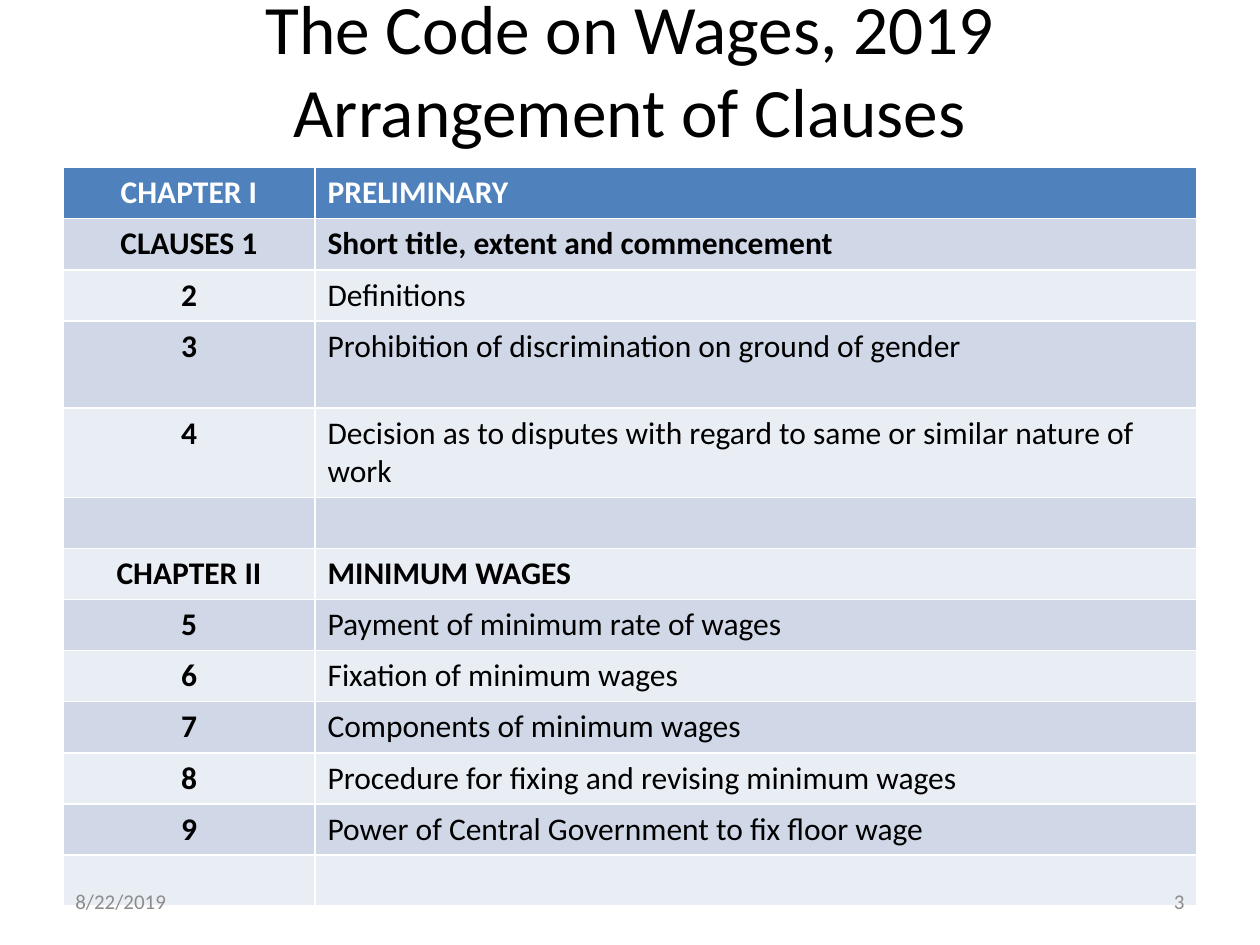
import pptx
import pptx.util
import pptx.dml.color
import pptx.enum.text

Inch = pptx.util.Inches
Anchor = pptx.enum.text.MSO_ANCHOR
Align = pptx.enum.text.PP_ALIGN

HEAD = ["The Code on Wages, 2019", "Arrangement of Clauses"]
ROWS = [
    ("CHAPTER I", "PRELIMINARY"),
    ("CLAUSES 1", "Short title, extent and commencement"),
    ("2", "Definitions"),
    ("3", "Prohibition of discrimination on ground of gender"),
    ("4", "Decision as to disputes with regard to same or similar nature of work"),
    ("", ""),
    ("CHAPTER II", "MINIMUM WAGES"),
    ("5", "Payment of minimum rate of wages"),
    ("6", "Fixation of minimum wages"),
    ("7", "Components of minimum wages"),
    ("8", "Procedure for fixing and revising minimum wages"),
    ("9", "Power of Central Government to fix floor wage"),
    ("", ""),
]
BOLD = {0, 1, 6}
TALL = {3, 4}
FOOT = [("8/22/2019", Align.LEFT), ("3", Align.RIGHT)]

THEME = {
    "font": "Calibri",
    "ink": "000000", "light": "FFFFFF", "grey": "8C8C8C",
    "head": "4F81BD", "bands": ("E9EDF4", "D0D8E8"),
    "title": 39.6, "body": 18, "foot": 12,
}

WIDE, HIGH = 10, 7.5
EDGE = WIDE / 20
SPAN = WIDE - 2 * EDGE
COLS = (2, 7)
TOP = 1.33
ROW, DEEP = 0.4, 0.69


def tint(code):
    return pptx.dml.color.RGBColor.from_string(code)


def style(par, size, ink, align, bold=False):
    par.alignment = align
    par.font.color.rgb = tint(THEME[ink])
    look = {"name": THEME["font"], "size": pptx.util.Pt(THEME[size]), "bold": bold}
    for key, val in look.items():
        setattr(par.font, key, val)


def place(shape, *box):
    for key, val in zip(("left", "top", "width", "height"), box):
        setattr(shape, key, Inch(val))


def add_title(slide):
    title = slide.shapes.title
    place(title, EDGE, 0, SPAN, 1.08)
    frame = title.text_frame
    frame.auto_size = pptx.enum.text.MSO_AUTO_SIZE.NONE
    frame.vertical_anchor = Anchor.MIDDLE
    par = frame.paragraphs[0]
    style(par, "title", "ink", Align.CENTER)
    for num, line in enumerate(HEAD):
        if num:
            par.add_line_break()
        run = par.add_run()
        run.text = line
        run.font.size = pptx.util.Pt(THEME["title"])


def add_grid(slide):
    highs = [DEEP if num in TALL else ROW for num in range(len(ROWS))]
    grid = slide.shapes.add_table(
        len(ROWS), len(COLS), Inch(EDGE), Inch(TOP), Inch(SPAN), Inch(sum(highs))
    ).table
    for col, share in zip(grid.columns, COLS):
        col.width = Inch(SPAN * share / sum(COLS))
    for num, (row, high) in enumerate(zip(ROWS, highs)):
        grid.rows[num].height = Inch(high)
        fill = THEME["bands"][num % 2] if num else THEME["head"]
        for pos, text in enumerate(row):
            cell = grid.cell(num, pos)
            cell.text = text
            cell.fill.solid()
            cell.fill.fore_color.rgb = tint(fill)
            style(cell.text_frame.paragraphs[0], "body",
                  "ink" if num else "light",
                  Align.LEFT if pos else Align.CENTER,
                  pos == 0 or num in BOLD)


def add_foot(slide):
    wide = 2.33
    for num, (text, align) in enumerate(FOOT):
        left = EDGE + num * (SPAN - wide)
        box = slide.shapes.add_textbox(Inch(left), Inch(6.95), Inch(wide), Inch(0.4))
        frame = box.text_frame
        frame.word_wrap = True
        frame.vertical_anchor = Anchor.MIDDLE
        frame.text = text
        style(frame.paragraphs[0], "foot", "grey", align)


def main():
    deck = pptx.Presentation()
    deck.slide_width, deck.slide_height = Inch(WIDE), Inch(HIGH)
    slide = deck.slides.add_slide(deck.slide_layouts.get_by_name("Title Only"))
    add_title(slide)
    add_grid(slide)
    add_foot(slide)
    deck.save("out.pptx")


if __name__ == "__main__":
    main()
